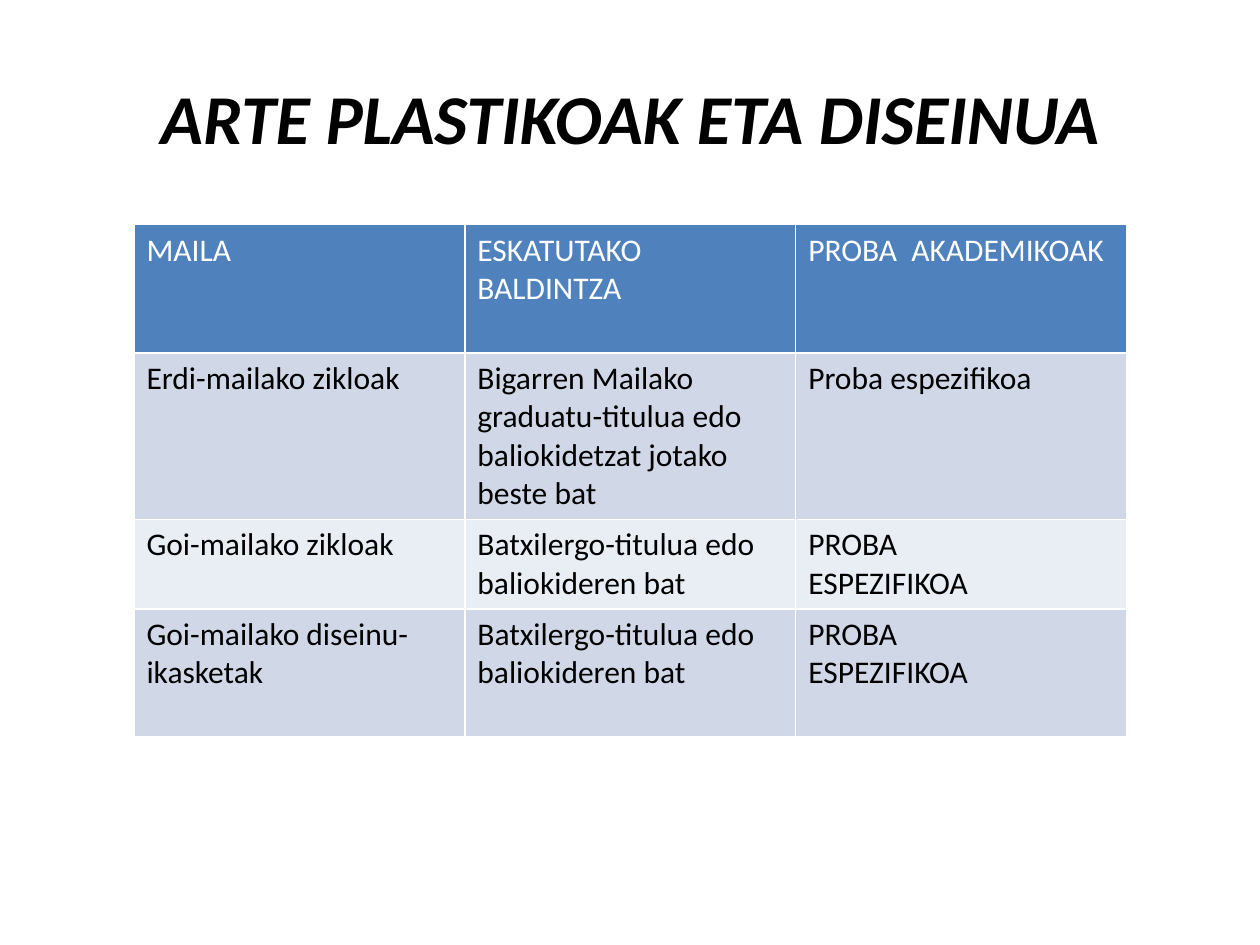
from pptx import Presentation
from pptx.dml.color import RGBColor
from pptx.enum import text
from pptx.util import Cm, Pt

FONT = "Calibri"
BLACK = RGBColor(0x00, 0x00, 0x00)
WHITE = RGBColor(0xFF, 0xFF, 0xFF)
HEADER = RGBColor(0x4F, 0x81, 0xBD)
BAND_DARK = RGBColor(0xD0, 0xD8, 0xE8)
BAND_LIGHT = RGBColor(0xE9, 0xED, 0xF4)

ROWS = [
    ("MAILA", "ESKATUTAKO BALDINTZA", "PROBA  AKADEMIKOAK"),
    ("Erdi-mailako zikloak",
     "Bigarren Mailako graduatu-titulua edo baliokidetzat jotako beste bat",
     "Proba espezifikoa"),
    ("Goi-mailako zikloak", "Batxilergo-titulua edo baliokideren bat",
     "PROBA\nESPEZIFIKOA"),
    ("Goi-mailako diseinu-ikasketak", "Batxilergo-titulua edo baliokideren bat",
     "PROBA\nESPEZIFIKOA"),
]
ROW_HEIGHTS = [2.59, 3.35, 1.8, 2.58]
COL_WIDTH = 6.67

prs = Presentation()
prs.slide_width, prs.slide_height = Cm(25.4), Cm(19.05)
s = prs.slides.add_slide(prs.slide_layouts[5])

# Title
title = s.shapes.title
title.left, title.top, title.width, title.height = Cm(1.27), Cm(0.76), Cm(22.86), Cm(3.18)
tf = title.text_frame
tf.text = "ARTE PLASTIKOAK ETA DISEINUA"
tf.vertical_anchor = text.MSO_ANCHOR.MIDDLE
p = tf.paragraphs[0]
p.alignment = text.PP_ALIGN.CENTER
p.font.name, p.font.size = FONT, Pt(40)
p.font.bold = p.font.italic = True
p.font.color.rgb = BLACK

# Table of levels, entry requirements and tests
table = s.shapes.add_table(len(ROWS), len(ROWS[0]), Cm(2.7), Cm(4.53),
                           Cm(COL_WIDTH * len(ROWS[0])), Cm(sum(ROW_HEIGHTS))).table
for col in table.columns:
    col.width = Cm(COL_WIDTH)

for i, (row, height) in enumerate(zip(ROWS, ROW_HEIGHTS)):
    table.rows[i].height = Cm(height)
    if i == 0:
        fill, color = HEADER, WHITE
    else:
        fill, color = (BAND_DARK if i % 2 else BAND_LIGHT), BLACK
    for j, words in enumerate(row):
        cell = table.cell(i, j)
        cell.fill.solid()
        cell.fill.fore_color.rgb = fill
        cell.text = words
        for p in cell.text_frame.paragraphs:
            p.font.name, p.font.size, p.font.bold = FONT, Pt(18), False
            p.font.color.rgb = color

prs.save("out.pptx")
